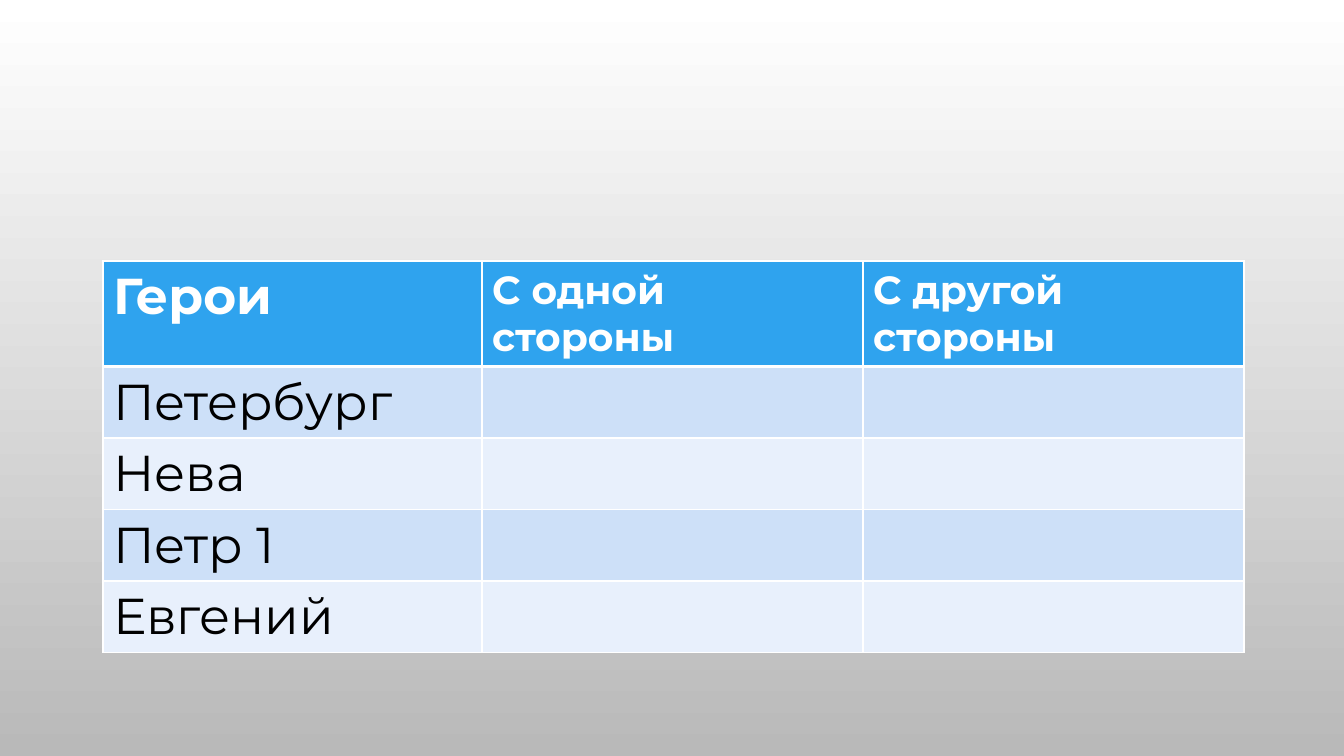
from dataclasses import dataclass

from lxml.etree import SubElement
from pptx import Presentation
from pptx.dml.color import RGBColor
from pptx.oxml.ns import qn
from pptx.util import Emu, Pt

PX_PER_INCH = 100.8
TABLE_LEFT, TABLE_TOP = 103, 261
COLUMN_WIDTHS = (379, 381, 381)
HEADER_HEIGHT, BODY_HEIGHT = 105, 71
FONT_NAME = "Montserrat"
WHITE, BLACK = "FFFFFF", "000000"
BACKGROUND_BOTTOM = "B9B9B9"
HEADER_FILL = "2FA3EE"
BAND_FILLS = ("CDE0F8", "E8F0FC")


@dataclass(frozen=True)
class CellStyle:
    fill: str
    font: dict
    borders: dict  # side -> line width in points


@dataclass(frozen=True)
class TableRow:
    height: int
    texts: tuple
    styles: tuple


def px(length: int) -> Emu:
    return Emu(round(length * 914400 / PX_PER_INCH))


def color(value: str) -> RGBColor:
    return RGBColor.from_string(value)


def header_style(size: int) -> CellStyle:
    font = {"size": Pt(size), "bold": True, "color": WHITE}
    return CellStyle(HEADER_FILL, font, {"L": 1, "R": 1, "T": 1, "B": 3})


def body_style(fill: str) -> CellStyle:
    # The top edge comes from the bottom border of the row above
    font = {"size": Pt(36), "bold": False, "color": BLACK}
    return CellStyle(fill, font, {"L": 1, "R": 1, "B": 1})


def build_rows() -> list:
    headings = ("Герои", "С одной стороны", "С другой стороны")
    heroes = ("Петербург", "Нева", "Петр 1", "Евгений")
    header_styles = (header_style(36), header_style(28), header_style(28))
    rows = [TableRow(HEADER_HEIGHT, headings, header_styles)]
    for index, hero in enumerate(heroes):
        style = body_style(BAND_FILLS[index % 2])
        rows.append(TableRow(BODY_HEIGHT, (hero, "", ""), (style,) * 3))
    return rows


def set_background(slide) -> None:
    fill = slide.background.fill
    fill.gradient()
    fill.gradient_angle = 270
    for stop, value in zip(fill.gradient_stops, (WHITE, BACKGROUND_BOTTOM)):
        stop.color.rgb = color(value)


def format_cell(cell, text: str, style: CellStyle) -> None:
    # Borders come before the fill in the cell properties
    properties = cell._tc.get_or_add_tcPr()
    for side, width in style.borders.items():
        line = SubElement(properties, qn(f"a:ln{side}"), w=str(Pt(width)))
        solid = SubElement(line, qn("a:solidFill"))
        SubElement(solid, qn("a:srgbClr"), val=WHITE)
    cell.fill.solid()
    cell.fill.fore_color.rgb = color(style.fill)

    if text:
        run = cell.text_frame.paragraphs[0].add_run()
        run.text = text
        run.font.name = FONT_NAME
        for name, value in style.font.items():
            if name == "color":
                run.font.color.rgb = color(value)
            else:
                setattr(run.font, name, value)


def add_heroes_table(slide, rows: list) -> None:
    frame = slide.shapes.add_table(
        len(rows), len(COLUMN_WIDTHS), px(TABLE_LEFT), px(TABLE_TOP),
        px(sum(COLUMN_WIDTHS)), px(sum(row.height for row in rows)))
    table = frame.table
    for column, width in zip(table.columns, COLUMN_WIDTHS):
        column.width = px(width)
    for table_row, row in zip(table.rows, rows):
        table_row.height = px(row.height)
        for cell, text, style in zip(table_row.cells, row.texts, row.styles):
            format_cell(cell, text, style)


def main() -> None:
    presentation = Presentation()
    presentation.slide_width = px(1344)
    presentation.slide_height = px(756)
    slide = presentation.slides.add_slide(presentation.slide_layouts[6])
    set_background(slide)
    add_heroes_table(slide, build_rows())
    presentation.save("out.pptx")


if __name__ == "__main__":
    main()
